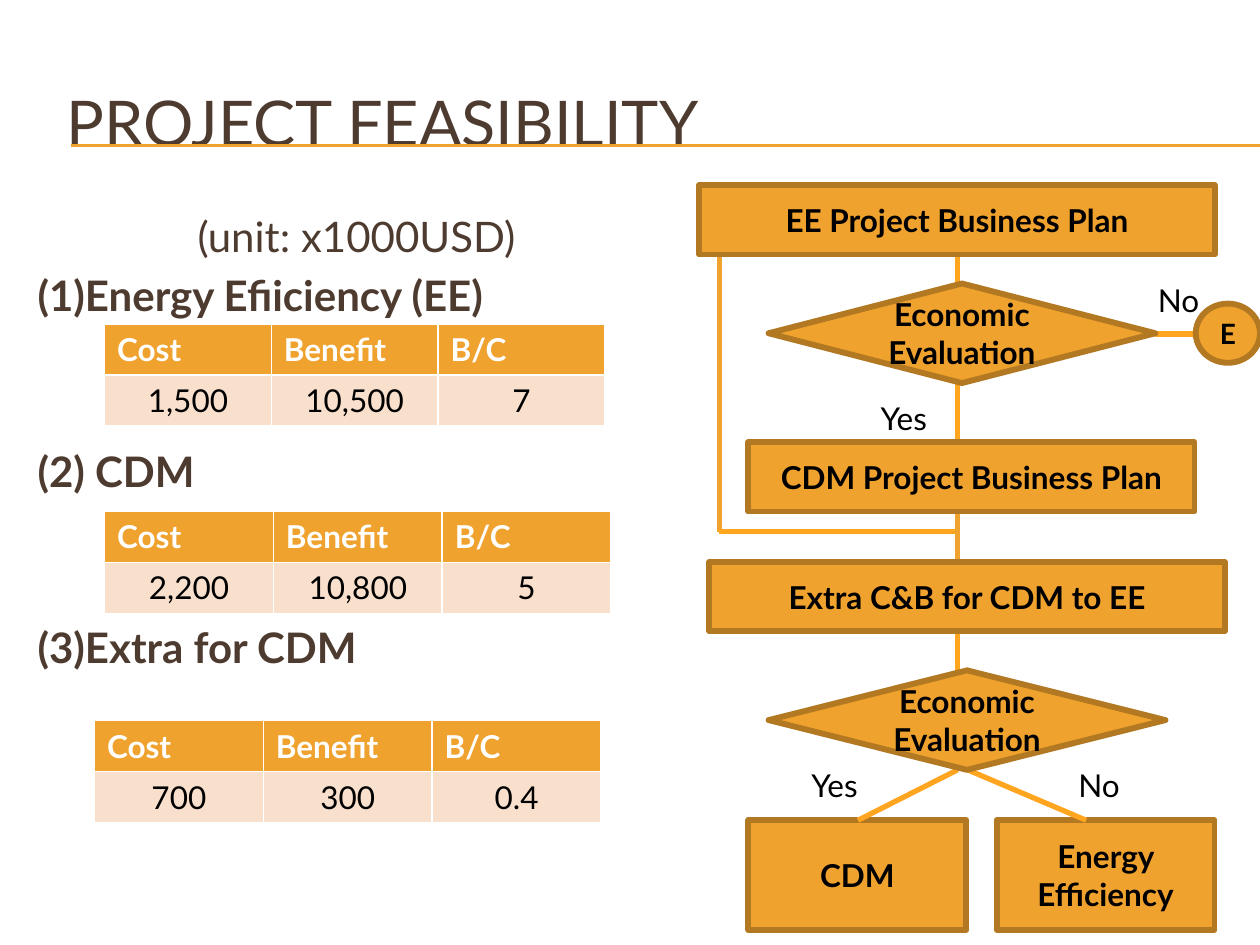
from typing import NamedTuple

from lxml import etree
from pptx import Presentation
from pptx import util as u
from pptx.dml.color import RGBColor
from pptx.enum import shapes, text
from pptx.oxml.ns import qn

FONT = "Lato"
COLORS = {
    "title": "4E3B30",
    "amber": "F0A22E",
    "edge": "B27822",
    "link": "FFA51F",
    "cell": "F9E0CD",
    "black": "000000",
    "white": "FFFFFF",
}
COLUMNS, ROWS = 100, 75  # slide grid
MIDDLE = 76  # column of the flow's main line
BODY_PITCH = 33.6  # points from one body line to the next
BODY_GAP = 4.8  # points before a body line

PROCESS = shapes.MSO_SHAPE.FLOWCHART_PROCESS
DECISION = shapes.MSO_SHAPE.FLOWCHART_DECISION
CIRCLE = shapes.MSO_SHAPE.FLOWCHART_CONNECTOR


class Box(NamedTuple):
    """Place on the slide grid."""
    col: float
    row: float
    cols: float
    rows: float


class Node(NamedTuple):
    label: str
    kind: shapes.MSO_SHAPE
    box: Box
    size: int = 18


class Link(NamedTuple):
    start: tuple[float, float]
    end: tuple[float, float]
    color: str = "link"
    width: float = 3


class Label(NamedTuple):
    label: str
    col: float
    row: float


class CostTable(NamedTuple):
    box: Box
    values: tuple[str, str, str]


class BodyLine(NamedTuple):
    label: str
    bold: bool = True
    skipped: int = 0
    indent: float = 0


HEADER = ("Cost", "Benefit", "B/C")
TABLES = [
    CostTable(Box(8.3, 25.7, 39.7, 8.1), ("1,500", "10,500", "7")),
    CostTable(Box(8.3, 40.6, 40.2, 8.1), ("2,200", "10,800", "5")),
    CostTable(Box(7.5, 57.2, 40.2, 8.1), ("700", "300", "0.4")),
]
BODY = [
    BodyLine("(unit: x1000USD)", bold=False, indent=12.7),
    BodyLine("(1)Energy Efiiciency (EE)"),
    BodyLine("(2) CDM", skipped=2),
    BodyLine("(3)Extra for CDM", skipped=2),
]
TITLE_RULES = [
    Link((5.6, row), (COLUMNS, row), "amber", 0.75) for row in (11.5, 11.6)
]
OUTCOMES = [
    Node("Energy Efficiency", PROCESS, Box(79.1, 65.1, 17.3, 8.7)),
    Node("CDM", PROCESS, Box(59.4, 65.1, 17.3, 8.7)),
]
LINKS = [
    Link((68.1, 65.1), (MIDDLE, 61.1)),
    Link((76.8, 61.1), (86.2, 65.1)),
    Link((91.7, 26.5), (95.7, 26.5)),
    Link((57.1, 20.2), (57.1, 42.2), "amber"),
    Link((57.1, 42.2), (MIDDLE, 42.2)),
    Link((MIDDLE, 40.6), (MIDDLE, 44.6), "amber"),
    Link((MIDDLE, 19.4), (MIDDLE, 40.6)),
    Link((MIDDLE, 49.3), (MIDDLE, 58.8)),
]
STEPS = [
    Node("Economic Evaluation", DECISION, Box(61, 22.5, 30.7, 7.9)),
    Node("EE Project Business Plan", PROCESS, Box(55.5, 14.7, 40.9, 5.5)),
    Node("CDM Project Business Plan", PROCESS, Box(59.4, 35.1, 35.4, 5.5)),
    Node("Extra C&B for CDM to EE", PROCESS, Box(56.3, 44.6, 40.9, 5.5)),
    Node("Economic Evaluation", DECISION, Box(61, 53.2, 31.5, 7.9)),
    Node("E", CIRCLE, Box(94.9, 24.1, 5.1, 4.7), 16),
]
ANSWERS = [
    Label("Yes", 68.9, 31.2),
    Label("No", 90.9, 21.8),
    Label("Yes", 63.4, 60.3),
    Label("No", 84.6, 60.3),
]

prs = Presentation()
prs.slide_width, prs.slide_height = u.Inches(10), u.Inches(7.5)


def x(cols: float) -> int:
    return round(prs.slide_width * cols / COLUMNS)


def y(rows: float) -> int:
    return round(prs.slide_height * rows / ROWS)


def place(box: Box) -> tuple[int, int, int, int]:
    return x(box.col), y(box.row), x(box.cols), y(box.rows)


def rgb(name: str) -> RGBColor:
    return RGBColor.from_string(COLORS[name])


def style(p, size: float, color: str, bold: bool = False, align: str = "LEFT") -> None:
    p.font.name, p.font.size, p.font.bold = FONT, u.Pt(size), bold
    p.font.color.rgb = rgb(color)
    p.alignment = text.PP_ALIGN[align]


def add_title(s, label: str) -> None:
    sp = s.shapes.title
    sp.left, sp.top, sp.width, sp.height = place(Box(3.3, 5, 95, 9.2))
    tf = sp.text_frame
    tf.text = label
    tf.auto_size = text.MSO_AUTO_SIZE.NONE
    tf.vertical_anchor = text.MSO_ANCHOR.MIDDLE
    tf.margin_left = x(2)
    style(tf.paragraphs[0], 36, "title")


def add_body(s) -> None:
    tf = s.shapes.add_textbox(*place(Box(2, 16.2, 54.3, 56.7))).text_frame
    tf.word_wrap = True
    for i, line in enumerate(BODY):
        p = tf.add_paragraph() if i else tf.paragraphs[0]
        p.text = line.label
        p.space_before = u.Pt(BODY_GAP + line.skipped * BODY_PITCH)
        style(p, 24, "title", line.bold)
        if line.indent:
            p._p.get_or_add_pPr().set("marL", str(x(line.indent)))


def add_cost_table(s, item: CostTable) -> None:
    table = s.shapes.add_table(2, len(HEADER), *place(item.box)).table
    looks = [(HEADER, "amber", "white", True, "LEFT"),
             (item.values, "cell", "black", False, "CENTER")]
    for r, (labels, fill, color, bold, align) in enumerate(looks):
        for c, label in enumerate(labels):
            cell = table.cell(r, c)
            cell.text = label
            cell.fill.solid()
            cell.fill.fore_color.rgb = rgb(fill)
            style(cell.text_frame.paragraphs[0], 18, color, bold, align)


def add_node(s, node: Node) -> None:
    sp = s.shapes.add_shape(node.kind, *place(node.box))
    sp.shadow.inherit = False
    sp.fill.solid()
    sp.fill.fore_color.rgb = rgb("amber")
    sp.line.color.rgb = rgb("edge")
    sp.line.width = u.Pt(3.35)
    tf = sp.text_frame
    tf.text = node.label
    tf.word_wrap = True
    tf.vertical_anchor = text.MSO_ANCHOR.MIDDLE
    style(tf.paragraphs[0], node.size, "black", True, "CENTER")


def add_link(s, link: Link) -> None:
    (col1, row1), (col2, row2) = link.start, link.end
    line = s.shapes.add_connector(
        shapes.MSO_CONNECTOR.STRAIGHT, x(col1), y(row1), x(col2), y(row2))
    line.line.color.rgb = rgb(link.color)
    line.line.width = u.Pt(link.width)
    etree.SubElement(line._element.spPr, qn("a:effectLst"))


def add_label(s, item: Label) -> None:
    tf = s.shapes.add_textbox(*place(Box(item.col, item.row, 7.1, 4))).text_frame
    tf.text = item.label
    tf.word_wrap = True
    style(tf.paragraphs[0], 18, "black")


def main() -> None:
    s = prs.slides.add_slide(prs.slide_layouts[5])
    add_title(s, "PROJECT FEASIBILITY")
    add_body(s)
    for draw, items in [(add_link, TITLE_RULES), (add_cost_table, TABLES),
                        (add_node, OUTCOMES), (add_link, LINKS),
                        (add_label, ANSWERS), (add_node, STEPS)]:
        for item in items:
            draw(s, item)
    prs.save("out.pptx")


if __name__ == "__main__":
    main()
